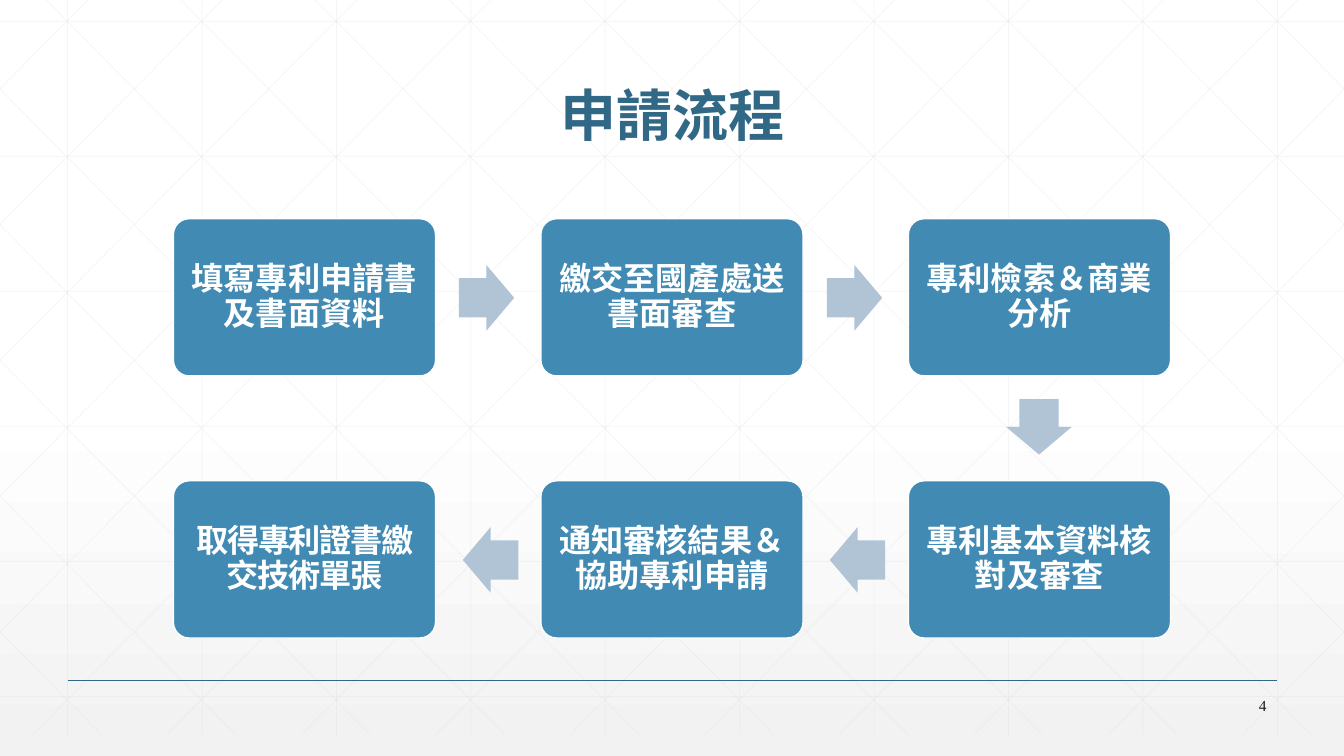
from pptx import Presentation
from pptx import util as u
from pptx.dml.color import RGBColor
from pptx.enum import shapes, text
from pptx.oxml.ns import qn
from lxml import etree

TITLE = "申請流程"
PAGE = "4"
STEPS = [
    ("填寫專利申請書及書面資料", 0, 0),
    ("繳交至國產處送書面審查", 1, 0),
    ("專利檢索＆商業分析", 2, 0),
    ("專利基本資料核對及審查", 2, 1),
    ("通知審核結果＆協助專利申請", 1, 1),
    ("取得專利證書繳交技術單張", 0, 1),
]
ARROWS = [
    (4.55, 2.63, 0),
    (8.2, 2.63, 0),
    (10.03, 3.91, 90),
    (8.23, 5.23, 180),
    (4.59, 5.23, 180),
]
FONT = "Times New Roman"
WHITE = RGBColor(0xFF, 0xFF, 0xFF)
PALE = RGBColor(0xF2, 0xF2, 0xF2)
GRID = RGBColor(0xD9, 0xD9, 0xD9)
NAVY = RGBColor(0x31, 0x68, 0x86)
BLUE = RGBColor(0x41, 0x8A, 0xB3)
MIST = RGBColor(0xB0, 0xC4, 0xD6)
INK = RGBColor(0x1A, 0x1A, 0x1A)

WIDE, HIGH = 13.33, 7.5
TOP, END = -0.21, 7.29
STEP = 4 / 3
SLOPE = 0.99
BOX_W, BOX_H = 2.6, 1.56
BOX_X, BOX_Y = 1.72, 2.17
GAP_X, GAP_Y = 3.645, 2.6


def add_line(slide, x1, y1, x2, y2, color, width, alpha=None):
    ends = [u.Inches(v) for v in (x1, y1, x2, y2)]
    line = slide.shapes.add_connector(shapes.MSO_CONNECTOR.STRAIGHT, *ends)
    line.line.color.rgb = color
    line.line.width = u.Pt(width)
    props = line._element.spPr
    if alpha:
        tint = props.find(".//" + qn("a:srgbClr"))
        etree.SubElement(tint, qn("a:alpha")).set("val", str(alpha * 1000))
    etree.SubElement(props, qn("a:effectLst"))


def add_grid(slide):
    for i in range(10):
        x = 0.67 + i * STEP
        add_line(slide, x, TOP, x, END, GRID, 0.5, 25)
    for i in range(6):
        y = 0.21 + i * 1.34
        add_line(slide, 0, y, WIDE, y, GRID, 0.5, 25)
    for i in range(-5, 10):
        start = 0.25 + i * STEP
        x1 = max(start, 0)
        x2 = min(start + SLOPE * (END - TOP), WIDE)
        y1, y2 = [TOP + (x - start) / SLOPE for x in (x1, x2)]
        add_line(slide, x1, y1, x2, y2, GRID, 0.5, 25)
        add_line(slide, WIDE - x1, y1, WIDE - x2, y2, GRID, 0.5, 25)


def put_text(shape, words, size, color, align, bold=True, space=0.9):
    frame = shape.text_frame
    frame.word_wrap = True
    frame.vertical_anchor = text.MSO_ANCHOR.MIDDLE
    para = frame.paragraphs[0]
    para.text = words
    para.alignment = align
    para.line_spacing = space
    font = para.font
    font.name, font.size, font.bold = FONT, u.Pt(size), bold
    font.color.rgb = color
    return frame


def add_text(slide, place, *style, **more):
    box = slide.shapes.add_textbox(*[u.Inches(v) for v in place])
    put_text(box, *style, **more)


def add_form(slide, kind, place, fill):
    form = slide.shapes.add_shape(kind, *[u.Inches(v) for v in place])
    form.shadow.inherit = False
    form.fill.solid()
    form.fill.fore_color.rgb = fill
    return form


def add_step(slide, words, col, row):
    place = BOX_X + col * GAP_X, BOX_Y + row * GAP_Y, BOX_W, BOX_H
    box = add_form(slide, shapes.MSO_SHAPE.ROUNDED_RECTANGLE, place, BLUE)
    box.adjustments[0] = 0.1
    box.line.color.rgb = WHITE
    box.line.width = u.Pt(1)
    frame = put_text(box, words, 23, WHITE, text.PP_ALIGN.CENTER)
    frame.margin_left = frame.margin_right = u.Inches(0.1)
    frame.margin_top = frame.margin_bottom = u.Inches(0.1)
    return frame


def add_arrow(slide, x, y, turn):
    arrow = add_form(slide, shapes.MSO_SHAPE.RIGHT_ARROW, (x, y, 0.55, 0.65), MIST)
    arrow.adjustments[0] = 0.6
    arrow.adjustments[1] = 0.5
    arrow.line.fill.background()
    arrow.rotation = turn


def main():
    deck = Presentation()
    deck.slide_width, deck.slide_height = u.Inches(WIDE), u.Inches(HIGH)
    slide = deck.slides.add_slide(deck.slide_layouts[6])
    back = slide.background.fill
    back.gradient()
    back.gradient_angle = 270
    for stop, at, color in zip(back.gradient_stops, (0.53, 1), (WHITE, PALE)):
        stop.position = at
        stop.color.rgb = color

    add_grid(slide)
    add_line(slide, 0.67, 6.75, 12.67, 6.75, NAVY, 1)
    add_text(slide, (1.42, 0.55, 10.5, 1.25), TITLE, 40, NAVY, text.PP_ALIGN.CENTER)
    for step in STEPS:
        frame = add_step(slide, *step)
    last = frame.paragraphs[0].runs[0]
    last.font._element.set("spc", "-100")
    for arrow in ARROWS:
        add_arrow(slide, *arrow)
    add_text(slide, (11.66, 6.88, 1, 0.24), PAGE, 11, INK, text.PP_ALIGN.RIGHT,
             bold=False, space=1)
    deck.save("out.pptx")


if __name__ == "__main__":
    main()
